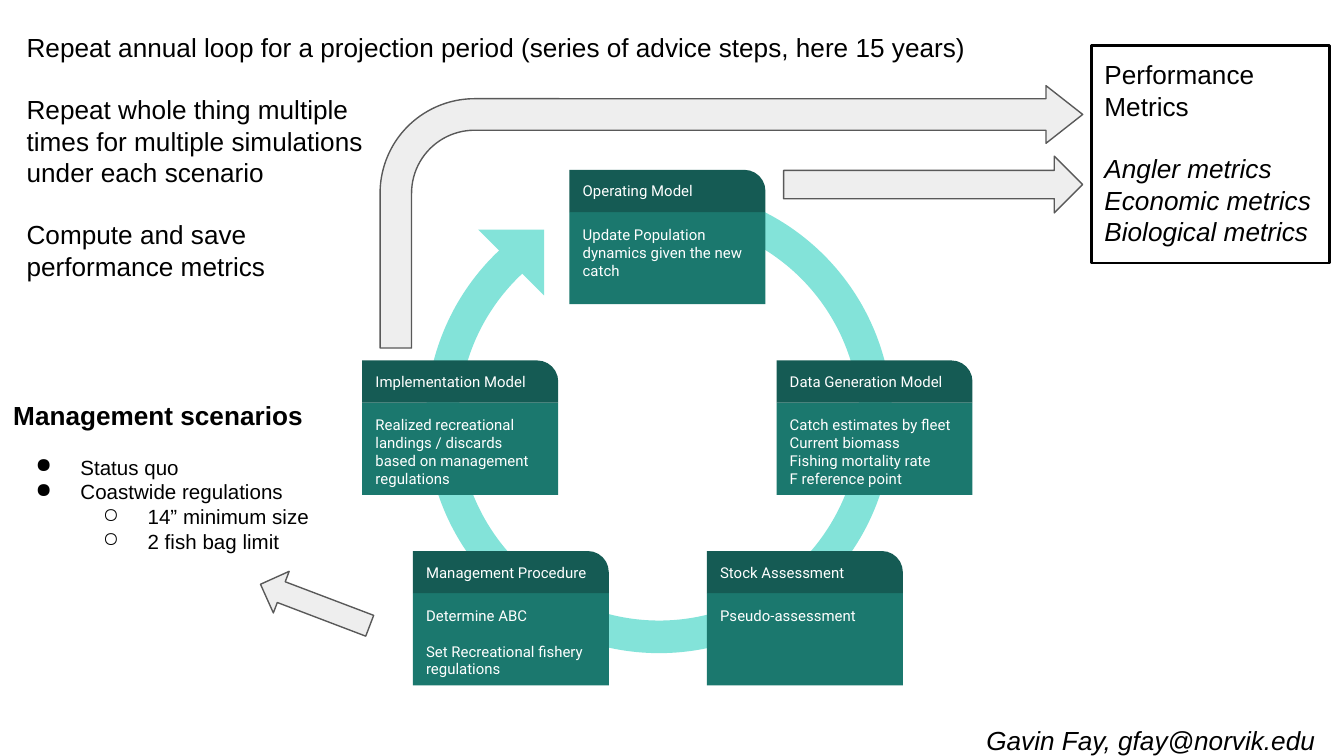
from dataclasses import dataclass

from lxml import etree
from pptx import Presentation
from pptx.dml.color import RGBColor
from pptx.enum.shapes import MSO_SHAPE
from pptx.enum.text import MSO_ANCHOR, MSO_AUTO_SIZE, PP_ALIGN
from pptx.oxml.ns import qn
from pptx.util import Pt

RECT = MSO_SHAPE.RECTANGLE
TAB = MSO_SHAPE.ROUND_1_RECTANGLE
BLOCK_ARC = MSO_SHAPE.BLOCK_ARC
TRIANGLE = MSO_SHAPE.RIGHT_TRIANGLE
RIGHT_ARROW = MSO_SHAPE.RIGHT_ARROW
BENT_ARROW = MSO_SHAPE.BENT_ARROW
TOP, MIDDLE = MSO_ANCHOR.TOP, MSO_ANCHOR.MIDDLE
GROW = MSO_AUTO_SIZE.SHAPE_TO_FIT_TEXT
LEFT = PP_ALIGN.LEFT


@dataclass(frozen=True)
class Theme:
    ring: str = "83E3D9"
    card: str = "1B786E"
    card_header: str = "155B54"
    arrow: str = "EEEEEE"
    arrow_line: str = "595959"
    ink: str = "000000"
    paper: str = "FFFFFF"
    text_font: str = "Arial"
    card_font: str = "Roboto"
    large: float = 14
    medium: float = 11
    small: float = 8
    inset: float = 7.2


class SlideBuilder:
    def __init__(self, slide, theme):
        self.s = slide
        self.t = theme

    def shape(self, kind, box, fill=None, line=None, width=0.75, rot=0, adj=()):
        sp = self.s.shapes.add_shape(kind, *map(Pt, box))
        sp.shadow.inherit = False
        sp.rotation = rot
        for i, value in enumerate(adj):
            sp.adjustments[i] = value
        if fill:
            sp.fill.solid()
            sp.fill.fore_color.rgb = RGBColor.from_string(fill)
        else:
            sp.fill.background()
        if line:
            sp.line.color.rgb = RGBColor.from_string(line)
            sp.line.width = Pt(width)
        else:
            sp.line.fill.background()
        return sp

    def add_lines(self, sp, lines, size, font, color, anchor=TOP):
        """Fill a shape with paragraphs and return them."""
        tf = sp.text_frame
        tf.word_wrap = True
        tf.vertical_anchor = anchor
        tf.margin_left = tf.margin_right = Pt(self.t.inset)
        tf.margin_top = tf.margin_bottom = Pt(self.t.inset)
        for i, line in enumerate(lines):
            p = tf.add_paragraph() if i else tf.paragraphs[0]
            p.text = line
            p.alignment = LEFT
            p.font.size = Pt(size)
            p.font.name = font
            p.font.color.rgb = RGBColor.from_string(color)
        return tf.paragraphs

    def card(self, left, top, title, lines, gap=0):
        """Header tab with a body below; gap separates body paragraphs."""
        t, width, header, body = self.t, 105, 22.6, 49.4
        sp = self.shape(RECT, (left, top + header, width, body), t.card)
        for p in self.add_lines(sp, lines, t.small, t.card_font, t.paper)[1:]:
            p.space_before = Pt(gap)
        sp = self.shape(TAB, (left, top, width, header), t.card_header, adj=[0.5])
        self.add_lines(sp, [title], t.small, t.card_font, t.paper, MIDDLE)

    def text(self, box, lines):
        sp = self.s.shapes.add_textbox(*map(Pt, box))
        paragraphs = self.add_lines(
            sp, lines, self.t.large, self.t.text_font, self.t.ink)
        sp.text_frame.auto_size = GROW
        return paragraphs

    def arrow(self, kind, box, adj, rot=0):
        self.shape(kind, box, self.t.arrow, self.t.arrow_line, rot=rot, adj=adj)

    def bullet(self, p, level):
        p.level = level
        p.font.size = Pt(self.t.medium)
        pPr = p._p.get_or_add_pPr()
        pPr.set("marL", str(Pt(36 * (level + 1))))
        pPr.set("indent", str(Pt(-24)))
        mark = etree.Element(qn("a:buChar"), char="●○"[level])
        # The bullet comes before the default run properties
        pPr.find(qn("a:defRPr")).addprevious(mark)


def main():
    prs = Presentation()
    prs.slide_width, prs.slide_height = Pt(720), Pt(405)
    theme = Theme()
    b = SlideBuilder(prs.slides.add_slide(prs.slide_layouts[6]), theme)
    blank_line = 16.7

    # Annual loop ring with its arrowhead
    b.shape(BLOCK_ARC, (228.2, 100.1, 249.8, 249.8), theme.ring, rot=180,
            adj=[54, 30.13, 0.07])
    b.shape(TRIANGLE, (256.2, 123, 35.3, 35.3), theme.ring, rot=180)

    # Model steps: left edge, row, title, body, gap between paragraphs
    cards = [
        (305.1, 0, "Operating Model",
         ["Update Population dynamics given the new catch"], 0),
        (378.7, 2, "Stock Assessment", ["Pseudo-assessment"], 0),
        (221.2, 2, "Management Procedure",
         ["Determine ABC", "Set Recreational fishery regulations"], 9.4),
        (416, 1, "Data Generation Model",
         ["Catch estimates by fleet", "Current biomass",
          "Fishing mortality rate", "F reference point"], 0),
        (194.1, 1, "Implementation Model",
         ["Realized recreational landings / discards based on management "
          "regulations"], 0),
    ]
    for left, row, title, lines, gap in cards:
        b.card(left, 91 + 102.1 * row, title, lines, gap)

    # Author line
    b.text((521.3, 380.9, 210.2, 31.7),
           ["Gavin Fay, gfay@norvik.edu"])[0].font.italic = True

    # Simulation notes
    notes = b.text((7.2, 9.4, 702.7, 150.5), [
        "Repeat annual loop for a projection period "
        "(series of advice steps, here 15 years)",
        "Repeat whole thing multiple\vtimes for multiple simulations\v"
        "under each scenario",
        "Compute and save\vperformance metrics",
    ])
    for p in notes[1:]:
        p.space_before = Pt(blank_line)

    # Management scenarios
    heading, *items = b.text((0, 206.6, 210.2, 97.9), [
        "Management scenarios", "Status quo", "Coastwide regulations",
        "14” minimum size", "2 fish bag limit",
    ])
    heading.font.bold = True
    heading.space_after = Pt(13)
    for p, level in zip(items, (0, 0, 1, 1)):
        b.bullet(p, level)

    # Performance metrics
    sp = b.shape(RECT, (584.6, 24.3, 127.7, 116.6), line=theme.ink, width=1.5)
    _, *metrics = b.add_lines(
        sp, ["Performance Metrics", "Angler metrics", "Economic metrics",
             "Biological metrics"], theme.large, theme.text_font, theme.ink)
    for p in metrics:
        p.font.italic = True
    metrics[0].space_before = Pt(blank_line)
    sp.text_frame.auto_size = GROW

    # Arrows to the scenarios and the metrics
    b.arrow(RIGHT_ARROW, (137.5, 312.2, 62.6, 23.8), [0.5, 0.5], rot=200.8)
    b.arrow(BENT_ARROW, (203.6, 45.9, 376.4, 140.6), [0.12, 0.11, 0.14, 0.36])
    b.arrow(RIGHT_ARROW, (419.8, 83.7, 160.2, 30.4), [0.5, 0.5])

    prs.save("out.pptx")


if __name__ == "__main__":
    main()
